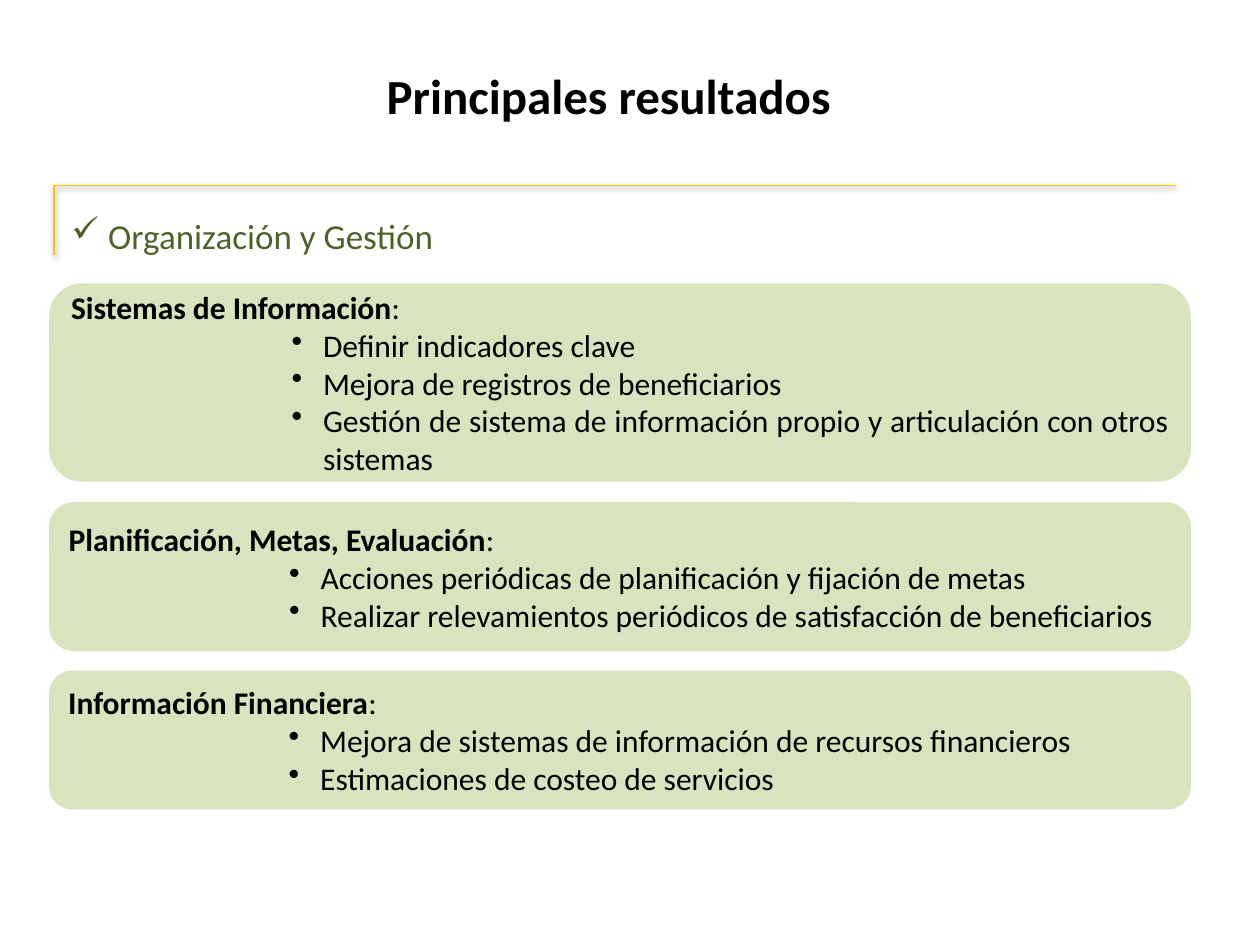
import lxml.etree
import pptx
import pptx.dml.color
import pptx.enum.shapes
import pptx.enum.text
import pptx.oxml
import pptx.oxml.ns
import pptx.util

Pt = pptx.util.Pt
JUSTIFY = pptx.enum.text.PP_ALIGN.JUSTIFY
MIDDLE = pptx.enum.text.MSO_ANCHOR.MIDDLE
COLORS = {"text": "000000", "heading": "4F6228", "box": "D7E4BD", "rule": "FFC000"}


def add_text(p, text, size, color="text", bold=False):
    p.alignment = JUSTIFY
    r = p.add_run()
    r.text = text
    r.font.name = "Calibri"
    r.font.size = Pt(size)
    r.font.bold = bold
    r.font.color.rgb = pptx.dml.color.RGBColor.from_string(COLORS[color])


def add_bullet(p, char, margin, hanging):
    pPr = p._p.get_or_add_pPr()
    pPr.set("marL", str(Pt(margin)))
    pPr.set("indent", str(-Pt(hanging)))
    bu = lxml.etree.SubElement(pPr, pptx.oxml.ns.qn("a:buChar"))
    bu.set("char", char)


prs = pptx.Presentation()
prs.slide_width, prs.slide_height = Pt(720), Pt(540)
s = prs.slides.add_slide(prs.slide_layouts[5])

# Title
title = s.shapes.title
title.left, title.top, title.width, title.height = Pt(213.8), Pt(33.8), Pt(292.3), Pt(41)
tf = title.text_frame
tf.auto_size = pptx.enum.text.MSO_AUTO_SIZE.NONE
tf.vertical_anchor = MIDDLE
add_text(tf.paragraphs[0], "Principales resultados", 28, bold=True)

# Corner rule with a soft shadow
fb = s.shapes.build_freeform(Pt(31), Pt(145.5))
fb.add_line_segments([(Pt(31), Pt(106)), (Pt(672), Pt(106))], close=False)
rule = fb.convert_to_shape()
rule.fill.background()
rule.line.color.rgb = pptx.dml.color.RGBColor.from_string(COLORS["rule"])
rule.line.width = Pt(1)
rule._element.spPr.append(pptx.oxml.parse_xml(
    f'<a:effectLst {pptx.oxml.ns.nsdecls("a")}>'
    f'<a:outerShdw blurRad="{Pt(3.1)}" dist="{Pt(1.6)}" dir="5400000" rotWithShape="0">'
    '<a:srgbClr val="000000"><a:alpha val="38000"/></a:srgbClr>'
    '</a:outerShdw></a:effectLst>'))

# Section heading
heading = s.shapes.add_textbox(Pt(33.8), Pt(118.8), Pt(669.6), Pt(372.2))
tf = heading.text_frame
tf.word_wrap = True
p = tf.paragraphs[0]
add_bullet(p, "✓", 21, 21)
add_text(p, "Organización y Gestión", 20, "heading")

# Result boxes: top, height, heading, items
boxes = [
    (162, 113.2, "Sistemas de Información", [
        "Definir indicadores clave",
        "Mejora de registros de beneficiarios",
        "Gestión de sistema de información propio y articulación con otros sistemas"]),
    (287, 85, "Planificación, Metas, Evaluación", [
        "Acciones periódicas de planificación y fijación de metas",
        "Realizar relevamientos periódicos de satisfacción de beneficiarios"]),
    (383.3, 79.2, "Información Financiera", [
        "Mejora de sistemas de información de recursos financieros",
        "Estimaciones de costeo de servicios"]),
]
for top, height, name, items in boxes:
    sp = s.shapes.add_shape(pptx.enum.shapes.MSO_SHAPE.ROUNDED_RECTANGLE,
                            Pt(28), Pt(top), Pt(652.5), Pt(height))
    sp.shadow.inherit = False
    sp.fill.solid()
    sp.fill.fore_color.rgb = pptx.dml.color.RGBColor.from_string(COLORS["box"])
    sp.line.fill.background()
    tf = sp.text_frame
    tf.word_wrap = True
    tf.vertical_anchor = MIDDLE
    p = tf.paragraphs[0]
    add_text(p, name, 18, bold=True)
    add_text(p, ":", 18)
    for item in items:
        p = tf.add_paragraph()
        p.level = 4
        add_bullet(p, "•", 144, 18)
        add_text(p, item, 18)

prs.save("out.pptx")
